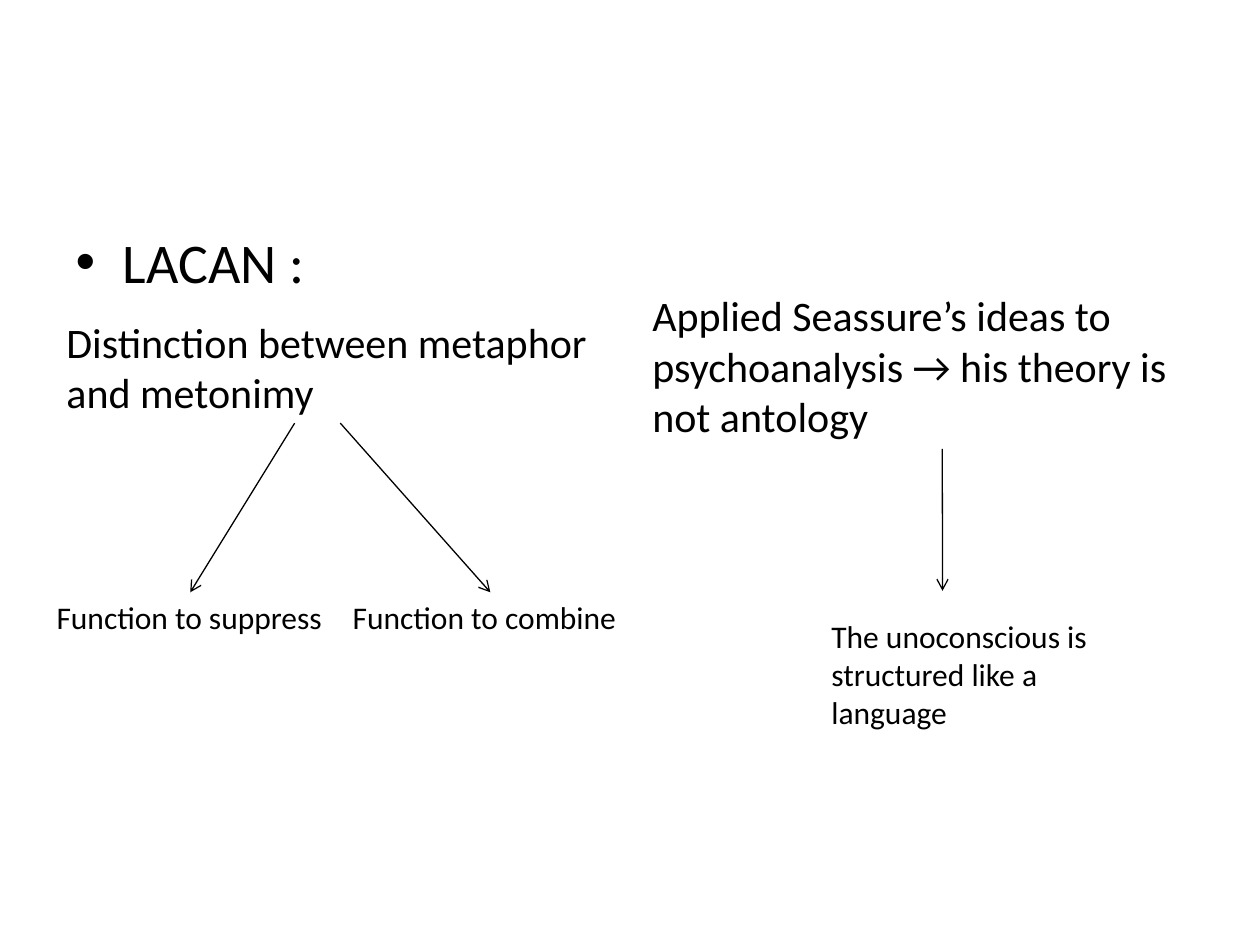
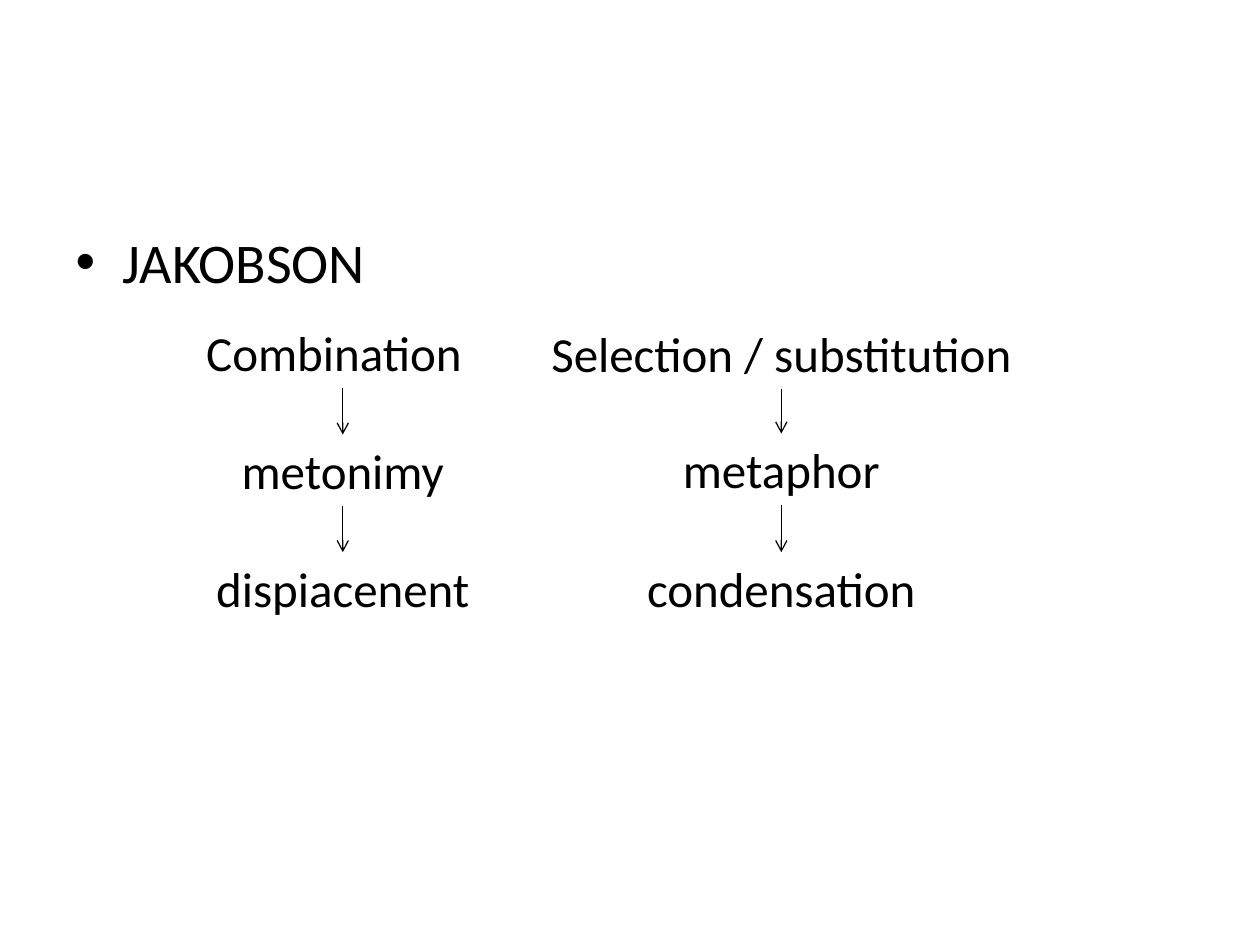
from dataclasses import dataclass

from lxml import etree
from pptx import Presentation
from pptx.dml.color import RGBColor
from pptx.enum.shapes import MSO_CONNECTOR
from pptx.enum.text import MSO_AUTO_SIZE, PP_ALIGN
from pptx.oxml.ns import qn
from pptx.shapes.autoshape import Shape
from pptx.shapes.connector import Connector
from pptx.slide import Slide
from pptx.text.text import _Paragraph as Paragraph
from pptx.util import Cm, Pt

COLORS = {"ink": "000000", "paper": "FFFFFF"}
FONT = "Calibri"
TOP, BOTTOM = 0, 2
STEP_HEIGHT = 1.45


@dataclass(frozen=True)
class Label:
    text: str
    left: float
    top: float
    width: float
    height: float
    size: int
    align: PP_ALIGN = PP_ALIGN.LEFT
    wraps: bool = True


@dataclass(frozen=True)
class Step:
    text: str
    top: float
    width: float
    align: PP_ALIGN = PP_ALIGN.CENTER


@dataclass(frozen=True)
class Chain:
    center: float
    steps: tuple[Step, ...]


IDEAS = Label("Applied Seassure’s ideas to psychoanalysis → his theory is not antology",
              12.9, 5.72, 12.19, 3.33, 24)
DISTINCTION = Label("Distinction between metaphor and metonimy", 1.09, 6.25, 11.4, 2.31, 24)
SUPPRESS = Label("Function to suppress", 0.89, 11.94, 5.89, 1.02, 18, wraps=False)
COMBINE = Label("Function to combine", 6.86, 11.94, 6.05, 1.02, 18, wraps=False)
UNCONSCIOUS = Label("The unoconscious is structured like a language", 16.51, 12.32, 5.79, 2.57, 18)

CHAINS = (
    Chain(6.91, (Step(" Combination", 6.38, 6.45, PP_ALIGN.LEFT),
                 Step("metonimy", 8.76, 7.7),
                 Step("dispiacenent", 11.13, 7.32))),
    Chain(15.75, (Step("Selection / substitution", 6.4, 10.39),
                  Step("metaphor", 8.74, 6.5),
                  Step("condensation", 11.13, 7.52))),
)


def add_text(paragraph: Paragraph, text: str, size: int) -> None:
    run = paragraph.add_run()
    run.text = text
    run.font.name = FONT
    run.font.size = Pt(size)
    run.font.color.rgb = RGBColor.from_string(COLORS["ink"])


def add_topic_slide(deck: Presentation, topic: str) -> Slide:
    slide = deck.slides.add_slide(deck.slide_layouts.get_by_name("Title and Content"))
    slide.background.fill.solid()
    slide.background.fill.fore_color.rgb = RGBColor.from_string(COLORS["paper"])
    title = slide.shapes.title.element
    title.getparent().remove(title)
    body = slide.placeholders[1]
    body.left, body.top, body.width, body.height = Cm(1.27), Cm(4.45), Cm(22.86), Cm(12.57)
    add_text(body.text_frame.paragraphs[0], topic, 32)
    return slide


def add_label(slide: Slide, label: Label) -> Shape:
    box = slide.shapes.add_textbox(Cm(label.left), Cm(label.top), Cm(label.width), Cm(label.height))
    frame = box.text_frame
    frame.word_wrap = label.wraps
    frame.auto_size = MSO_AUTO_SIZE.SHAPE_TO_FIT_TEXT
    paragraph = frame.paragraphs[0]
    paragraph.alignment = label.align
    add_text(paragraph, label.text, label.size)
    return box


def add_arrow(slide: Slide, start: tuple[float, float] = (0, 0),
              end: tuple[float, float] = (0, 0),
              source: Shape | None = None, target: Shape | None = None) -> Connector:
    arrow = slide.shapes.add_connector(
        MSO_CONNECTOR.STRAIGHT, Cm(start[0]), Cm(start[1]), Cm(end[0]), Cm(end[1]))
    if source is not None:
        arrow.begin_connect(source, BOTTOM)
    if target is not None:
        arrow.end_connect(target, TOP)
    arrow.line.color.rgb = RGBColor.from_string(COLORS["ink"])
    arrow.line.width = Pt(0.75)
    etree.SubElement(arrow.line._get_or_add_ln(), qn("a:tailEnd"), type="arrow")
    etree.SubElement(arrow.element.spPr, qn("a:effectLst"))
    return arrow


def build_lacan(deck: Presentation) -> None:
    slide = add_topic_slide(deck, "LACAN :")
    ideas = add_label(slide, IDEAS)
    add_label(slide, DISTINCTION)
    suppress = add_label(slide, SUPPRESS)
    combine = add_label(slide, COMBINE)
    add_label(slide, UNCONSCIOUS)
    add_arrow(slide, end=(19, 11.91), source=ideas)
    add_arrow(slide, start=(6.86, 8.53), target=combine)
    add_arrow(slide, start=(5.94, 8.53), target=suppress)


def add_chain(slide: Slide, chain: Chain) -> None:
    boxes = [
        add_label(slide, Label(step.text, chain.center - step.width / 2, step.top,
                               step.width, STEP_HEIGHT, 28, step.align))
        for step in chain.steps
    ]
    for source, target in zip(boxes, boxes[1:]):
        add_arrow(slide, source=source, target=target)


def build_jakobson(deck: Presentation) -> None:
    slide = add_topic_slide(deck, "JAKOBSON")
    for chain in CHAINS:
        add_chain(slide, chain)


def main() -> None:
    deck = Presentation()
    deck.slide_width, deck.slide_height = Cm(25.4), Cm(19.05)
    build_lacan(deck)
    build_jakobson(deck)
    deck.save("out.pptx")


if __name__ == "__main__":
    main()
